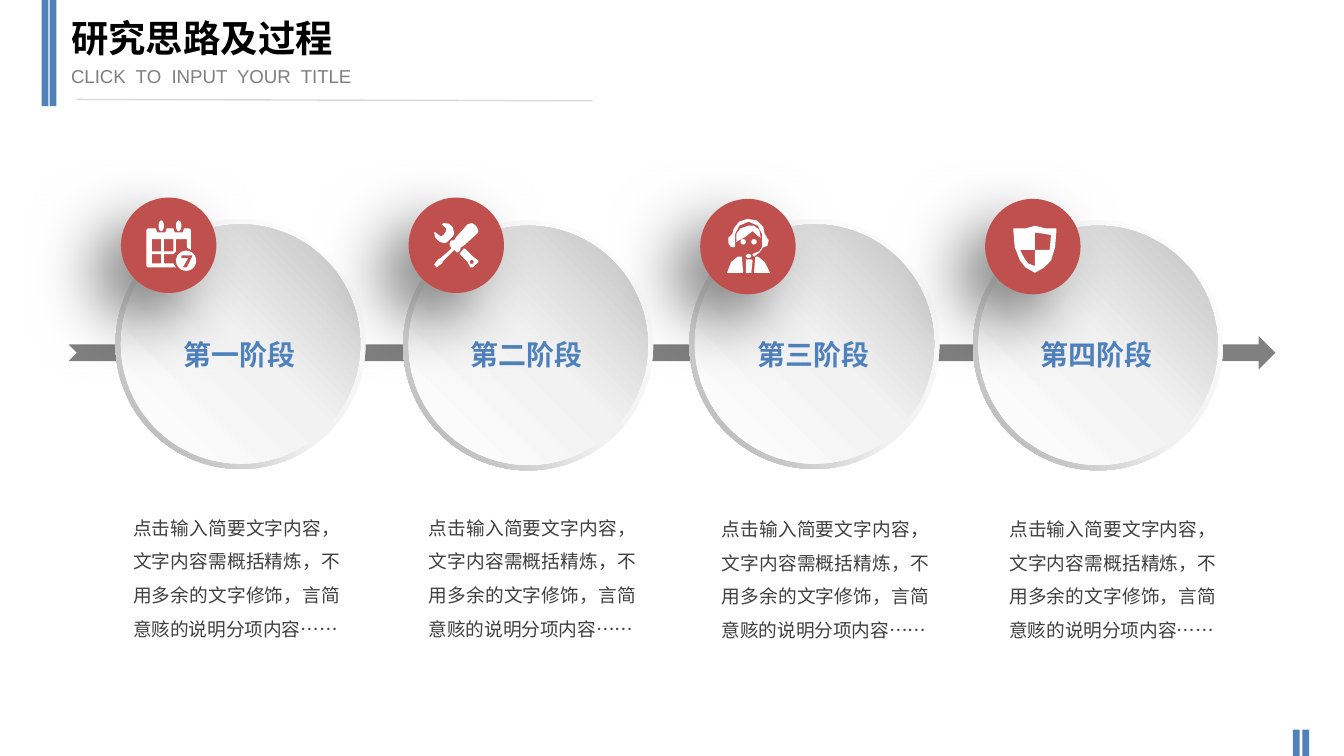
"""Build the four-stage research process slide."""
import math
from dataclasses import dataclass

from lxml import etree
from pptx import Presentation
from pptx import util as u
from pptx.dml.color import RGBColor
from pptx.enum import shapes, text
from pptx.oxml import ns

Point = tuple[float, float]
Contour = list[Point]
PRESET = shapes.MSO_SHAPE
ALIGN = text.PP_ALIGN


@dataclass(frozen=True)
class Theme:
    """Colours, fonts and type sizes."""
    blue: str = "4F81BD"
    red: str = "C0504D"
    white: str = "FFFFFF"
    black: str = "000000"
    arrow: str = "808080"
    rule: str = "D8D8D8"
    subtitle: str = "7F7F7F"
    body: str = "404040"
    latin: str = "Arial"
    chinese: str = "Noto Sans CJK SC"
    title_size: int = 20
    label_size: int = 15
    small_size: int = 10
    ring_stops: tuple = ((0, "FFFFFF"), (55, "F2F2F2"), (100, "A6A6A6"))
    face_stops: tuple = ((0, "FFFFFF"), (51, "F2F2F2"), (100, "BFBFBF"))


@dataclass(frozen=True)
class Stage:
    """One stage: its label, the places of its parts and its icon."""
    label: str
    ring: Point
    badge: Point
    note: Point
    icon: list[Contour]


THEME = Theme()
NOTE = "点击输入简要文字内容，文字内容需概括精炼，不用多余的文字修饰，言简意赅的说明分项内容……"


def box(x: float, y: float, width: float, height: float) -> Contour:
    """Return the corners of a rectangle."""
    return [(x, y), (x + width, y), (x + width, y + height), (x, y + height)]


def disc(x: float, y: float, radius: float, stretch: float = 1) -> Contour:
    """Return points around an ellipse."""
    angles = [math.tau * step / 24 for step in range(24)]
    return [(x + radius * math.cos(a), y + radius * stretch * math.sin(a)) for a in angles]


CALENDAR = [
    disc(30, 21, 2, 2), disc(43, 21, 2, 2), disc(48.5, 47, 7.5),
    [(19, 24), (20, 23), (26, 23), (27, 26), (33, 26), (34, 23), (39, 23), (40, 26), (46, 26),
     (47, 23), (51, 23), (52, 24), (52, 39), (49, 37), (49, 31), (41, 31), (41, 40), (39, 42),
     (32, 42), (32, 49), (39, 49), (41, 52), (20, 52), (19, 51)],
    box(23, 31, 7, 9), box(32, 31, 7, 9), box(23, 42, 7, 7),
    [(45, 43), (53, 43), (53, 44), (49, 52), (46, 52), (50, 45), (45, 45)],
]
TOOLS = [
    [(41, 38), (38, 42), (44, 48), (46, 52), (48, 52), (52, 48), (52, 47), (48, 44), (42, 38)],
    disc(47, 48, 1.5),
    [(31, 31), (33, 29), (34, 27), (33, 22), (30, 19.5), (26, 19), (25, 20), (28, 23), (28, 25),
     (26, 28), (24, 29), (20, 26), (19, 26), (20, 30), (23, 33), (27, 34), (29, 33)],
    [(51, 22), (49, 20), (47, 19), (44, 20), (35, 30), (34, 32), (32, 32), (31, 33), (30.5, 35),
     (32, 38), (24, 45), (22, 46), (19, 50), (21, 52), (25, 49), (26, 47), (34, 39), (36, 41),
     (38, 40), (39, 37), (41, 36), (51, 27), (52, 25)],
]
AGENT = [
    [(35, 15), (29, 17), (25, 22), (24, 26), (21, 29), (21, 33), (23, 36), (26, 36), (26, 26),
     (29, 20), (36, 17), (43, 20), (46, 26), (46, 36), (44, 39), (39, 41), (39, 42), (40, 43),
     (44, 40), (47, 36), (50, 35), (51, 31), (48, 26), (47, 21), (42, 16)],
    [(36, 20), (30, 22), (27, 26), (27, 32), (34, 28), (39, 24), (42, 27), (45, 29), (44, 23),
     (40, 20)],
    disc(32, 32, 2), disc(40, 32, 2), disc(36, 42.5, 2, 0.75),
    [(43, 43), (41, 43), (40, 55), (52, 55), (48, 47)],
    [(30, 43), (28, 43), (23, 47), (20, 55), (32, 55), (31, 43)],
    [(34, 45), (38, 45), (39, 46), (38, 55), (34, 55)],
]
SHIELD = [
    [(21, 22), (30, 22), (37, 20), (45, 22), (53, 22), (53, 24), (52, 36), (49, 46), (44, 51),
     (37, 55), (30, 51), (26, 46), (22, 36), (21, 24)],
    [(37, 38), (48, 38), (49, 27), (44, 26), (37, 25)],
    [(37, 50), (37, 38), (26, 38), (29, 44), (32, 48)],
]
STAGES = [
    Stage("第一阶段", (0.86, 1.63), (0.9, 1.47), (0.99, 3.76), CALENDAR),
    Stage("第二阶段", (3, 1.64), (3.04, 1.47), (3.19, 3.76), TOOLS),
    Stage("第三阶段", (5.13, 1.63), (5.21, 1.48), (5.37, 3.77), AGENT),
    Stage("第四阶段", (7.24, 1.64), (7.33, 1.48), (7.51, 3.77), SHIELD),
]


def place(shape, left: float, top: float, width: float, height: float) -> None:
    """Move and size a shape in inches."""
    shape.left, shape.top = u.Inches(left), u.Inches(top)
    shape.width, shape.height = u.Inches(width), u.Inches(height)


def paint(shape, color: str) -> None:
    """Give a shape a flat fill without line or shadow."""
    shape.shadow.inherit = False
    shape.fill.solid()
    shape.fill.fore_color.rgb = RGBColor.from_string(color)
    shape.line.fill.background()


def add_preset(slide, preset, bounds: tuple, color: str):
    """Add a flat preset shape."""
    shape = slide.shapes.add_shape(preset, *map(u.Inches, bounds))
    paint(shape, color)
    return shape


def add_gradient(shape, stops: tuple, angle: int) -> None:
    """Replace the fill of a shape by a linear gradient."""
    marks = "".join(f'<a:gs pos="{position * 1000}"><a:srgbClr val="{color}"/></a:gs>'
                    for position, color in stops)
    gradient = etree.fromstring(f'<a:gradFill {ns.nsdecls("a")} rotWithShape="1"><a:gsLst>{marks}'
                                f'</a:gsLst><a:lin ang="{angle * 60000}" scaled="0"/></a:gradFill>')
    solid = shape.element.spPr.find(ns.qn("a:solidFill"))
    solid.getparent().replace(solid, gradient)


def add_shadow(shape) -> None:
    """Give a shape a soft shadow to the lower left."""
    effects = shape.element.spPr.find(ns.qn("a:effectLst"))
    effects.append(etree.fromstring(
        f'<a:outerShdw {ns.nsdecls("a")} blurRad="{u.Pt(35)}" dist="{u.Pt(20)}" dir="8100000" '
        f'algn="tr" rotWithShape="0"><a:srgbClr val="{THEME.black}"><a:alpha val="50000"/>'
        '</a:srgbClr></a:outerShdw>'))


def write(shape, words: str, font: str, size: int, color: str, bold: bool = False,
          align=ALIGN.LEFT, wrap: bool = True):
    """Write one run in a shape and return its paragraph."""
    frame = shape.text_frame
    frame.word_wrap = wrap
    frame.vertical_anchor = text.MSO_ANCHOR.TOP
    paragraph = frame.paragraphs[0]
    paragraph.alignment = align
    run = paragraph.add_run()
    run.text = words
    run.font.name, run.font.size, run.font.bold = font, u.Pt(size), bold
    run.font.color.rgb = RGBColor.from_string(color)
    east_asian = etree.SubElement(run.font._element, ns.qn("a:ea"))
    east_asian.set("typeface", THEME.chinese)
    return paragraph


def add_header(slide) -> None:
    """Add the title, subtitle, rule and accent bars."""
    for left, top, height in ((0.31, 0, 0.79), (0.37, 0, 0.79), (9.62, 5.43, 0.2), (9.69, 5.43, 0.2)):
        add_preset(slide, PRESET.RECTANGLE, (left, top, 0.05, height), THEME.blue)
    rule = slide.shapes.add_connector(shapes.MSO_CONNECTOR.STRAIGHT,
                                      *map(u.Inches, (0.57, 0.74, 4.41, 0.75)))
    rule.line.color.rgb = RGBColor.from_string(THEME.rule)
    rule.line.width = u.Pt(0.75)
    etree.SubElement(rule.element.spPr, ns.qn("a:effectLst"))
    title = slide.shapes.title
    place(title, 0.43, 0.06, 4.04, 0.5)
    write(title, "研究思路及过程", THEME.latin, THEME.title_size, THEME.black, bold=True)
    subtitle = slide.shapes.add_textbox(*map(u.Inches, (0.43, 0.43, 3.15, 0.27)))
    write(subtitle, "CLICK  TO  INPUT  YOUR  TITLE", THEME.latin, THEME.small_size, THEME.subtitle)


def add_disc(slide, stage: Stage) -> None:
    """Add the ring, face and label of a stage."""
    left, top = stage.ring
    ring = add_preset(slide, PRESET.DONUT, (left, top, 1.86, 1.86), THEME.white)
    ring.adjustments[0] = 0.049
    add_gradient(ring, THEME.ring_stops, 135)
    face = add_preset(slide, PRESET.OVAL, (left + 0.04, top + 0.04, 1.78, 1.78), THEME.white)
    add_gradient(face, THEME.face_stops, 315)
    label = slide.shapes.add_textbox(*map(u.Inches, (left + 0.4, 2.46, 1.04, 0.35)))
    write(label, stage.label, THEME.chinese, THEME.label_size, THEME.blue, True, ALIGN.CENTER, False)


def add_note(slide, stage: Stage) -> None:
    """Add the description below a stage."""
    note = slide.shapes.add_textbox(*map(u.Inches, (*stage.note, 1.54, 1.01)))
    frame = note.text_frame
    frame.margin_left = frame.margin_top = frame.margin_right = frame.margin_bottom = 0
    paragraph = write(note, NOTE, THEME.chinese, THEME.small_size, THEME.body, align=ALIGN.JUSTIFY)
    paragraph.line_spacing = 1.5


def add_badge(slide, stage: Stage) -> None:
    """Add the red badge of a stage and its icon, given in hundredths of an inch."""
    left, top = stage.badge
    add_shadow(add_preset(slide, PRESET.OVAL, (left, top, 0.71, 0.71), THEME.red))
    contours = [[(u.Inches(left + x / 100), u.Inches(top + y / 100)) for x, y in contour]
                for contour in stage.icon]
    builder = slide.shapes.build_freeform(*contours[0][0])
    builder.add_line_segments(contours[0][1:], close=True)
    for contour in contours[1:]:
        builder.move_to(*contour[0])
        builder.add_line_segments(contour[1:], close=True)
    paint(builder.convert_to_shape(), THEME.white)


def main() -> None:
    """Build and save the slide."""
    presentation = Presentation()
    presentation.slide_width = u.Inches(10)
    presentation.slide_height = presentation.slide_width * 9 // 16
    slide = presentation.slides.add_slide(presentation.slide_layouts[5])
    add_header(slide)
    for stage in STAGES:
        add_note(slide, stage)
    add_preset(slide, PRESET.NOTCHED_RIGHT_ARROW, (0.51, 2.5, 8.98, 0.25), THEME.arrow)
    for draw in (add_disc, add_badge):
        for stage in STAGES:
            draw(slide, stage)
    presentation.save("out.pptx")


if __name__ == "__main__":
    main()
